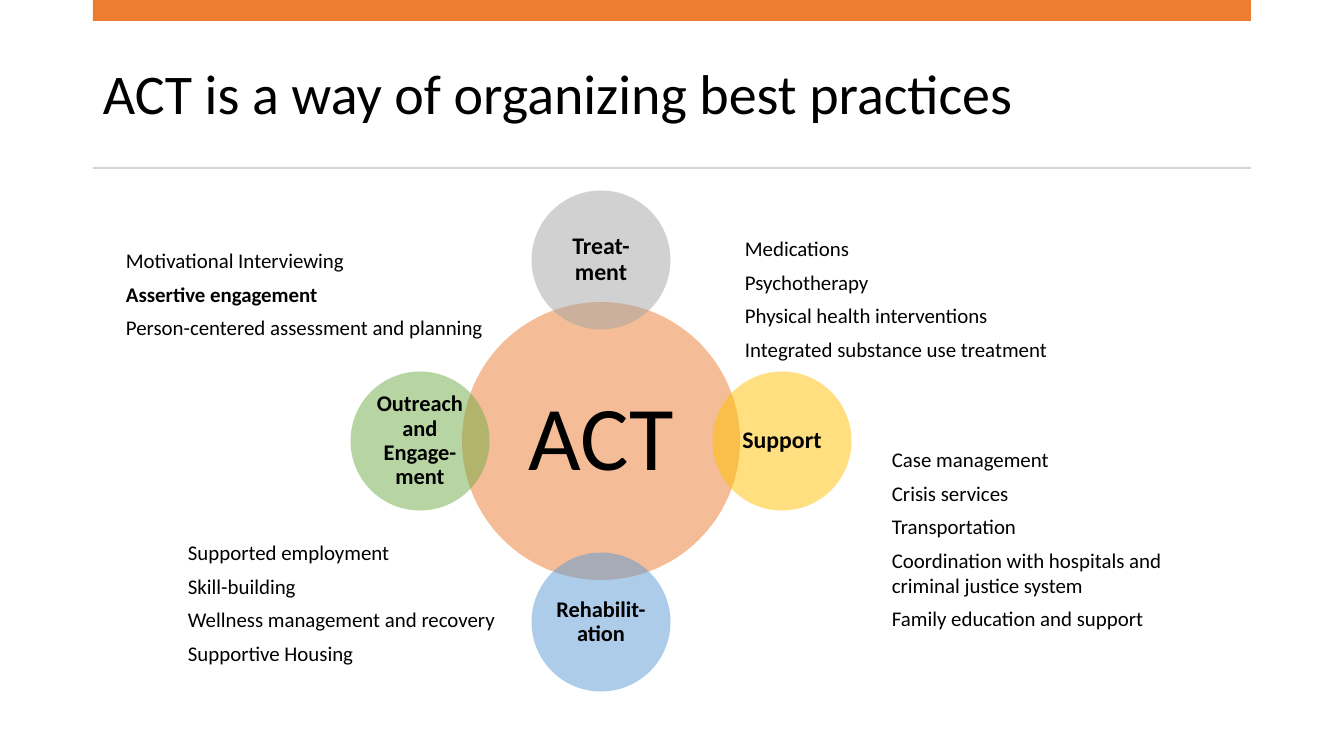
import pptx
import pptx.util
import pptx.dml.color
import pptx.enum.shapes
import pptx.enum.text
import pptx.oxml
import pptx.oxml.ns
from lxml import etree

RGB = pptx.dml.color.RGBColor
SHAPE = pptx.enum.shapes.MSO_SHAPE
ANCHOR = pptx.enum.text.MSO_ANCHOR
ALIGN = pptx.enum.text.PP_ALIGN

# Content
TITLE = "ACT is a way of organizing best practices"
ORANGE = RGB(0xED, 0x7D, 0x31)
GRAY = RGB(0xA5, 0xA5, 0xA5)
GOLD = RGB(0xFF, 0xC0, 0x00)
BLUE = RGB(0x5B, 0x9B, 0xD5)
GREEN = RGB(0x70, 0xAD, 0x47)
RULE = RGB(0xD5, 0xD5, 0xD5)
BLACK = RGB(0, 0, 0)
FONT = "Calibri"

# label, text size, colour, direction from the hub (x, y)
PARTS = [
    ("Treat-ment", 17, GRAY, (0, -1)),
    ("Support", 17, GOLD, (1, 0)),
    ("Rehabilit-ation", 16, BLUE, (0, 1)),
    ("Outreach and Engage-ment", 16, GREEN, (-1, 0)),
]

# box in px (left, top, width, height), lines
LISTS = [
    ((735, 231, 381, 137), ["Medications", "Psychotherapy",
                            "Physical health interventions",
                            "Integrated substance use treatment"]),
    ((178, 535, 336, 176), ["Supported employment", "Skill-building",
                            "Wellness management and recovery",
                            "Supportive Housing"]),
    ((882, 442, 346, 235), ["Case management", "Crisis services",
                            "Transportation",
                            "Coordination with hospitals and criminal justice system",
                            "Family education and support"]),
    ((116, 243, 416, 103), ["Motivational Interviewing", "Assertive engagement",
                            "Person-centered assessment and planning"]),
]
STRONG = {"Assertive engagement"}

# Layout in px
LEFT, WIDE = 93, 1158
HUB_X, HUB_Y = 601, 441
HUB_SIZE, PART_SIZE, ORBIT = 278, 139, 181


def px(n):
    return round(n * 914400 / 100.8)


def style(para, size, bold=False):
    for run in para.runs:
        font = run.font
        font.name, font.size, font.bold = FONT, pptx.util.Pt(size), bold
        font.color.rgb = BLACK


def add_shape(kind, box, color):
    shape = slide.shapes.add_shape(kind, *map(px, box))
    shape.shadow.inherit = False
    shape.fill.solid()
    shape.fill.fore_color.rgb = color
    shape.line.fill.background()
    return shape


def add_text(box):
    frame = slide.shapes.add_textbox(*map(px, box)).text_frame
    frame.word_wrap = True
    return frame


def add_circle(x, y, side, label, size, color, inset, bold):
    shape = add_shape(SHAPE.OVAL, (x - side / 2, y - side / 2, side, side), color)
    # Half transparent fill
    tint = shape.fill._xPr.find(".//" + pptx.oxml.ns.qn("a:srgbClr"))
    etree.SubElement(tint, pptx.oxml.ns.qn("a:alpha"), val="50000")
    frame = shape.text_frame
    frame.word_wrap = True
    frame.vertical_anchor = ANCHOR.MIDDLE
    frame.margin_left = frame.margin_right = px(inset)
    frame.margin_top = frame.margin_bottom = px(inset)
    frame.text = label
    para = frame.paragraphs[0]
    para.alignment = ALIGN.CENTER
    para.line_spacing = 0.9
    style(para, size, bold)


deck = pptx.Presentation()
deck.slide_width, deck.slide_height = px(1344), px(756)
slide = deck.slides.add_slide(deck.slide_layouts[6])

# Title with bar and rule
head = add_text((LEFT, 37, WIDE, 119))
head.vertical_anchor = ANCHOR.MIDDLE
head.text = TITLE
head.paragraphs[0].line_spacing = 0.9
style(head.paragraphs[0], 40)
add_shape(SHAPE.RECTANGLE, (LEFT, 0, WIDE, 21), ORANGE)
add_shape(SHAPE.RECTANGLE, (LEFT, 167, WIDE, 2), RULE)

# Hub and its four parts
add_circle(HUB_X, HUB_Y, HUB_SIZE, "ACT", 65, ORANGE, 9, False)
for label, size, color, (dx, dy) in PARTS:
    add_circle(HUB_X + dx * ORBIT, HUB_Y + dy * ORBIT, PART_SIZE,
               label, size, color, 2, True)

# Lists around the hub
for box, lines in LISTS:
    frame = add_text(box)
    frame.text = "\n".join(lines)
    for para in frame.paragraphs:
        para.space_after = pptx.util.Pt(6)
        style(para, 14.9, para.text in STRONG)

deck.save("out.pptx")
